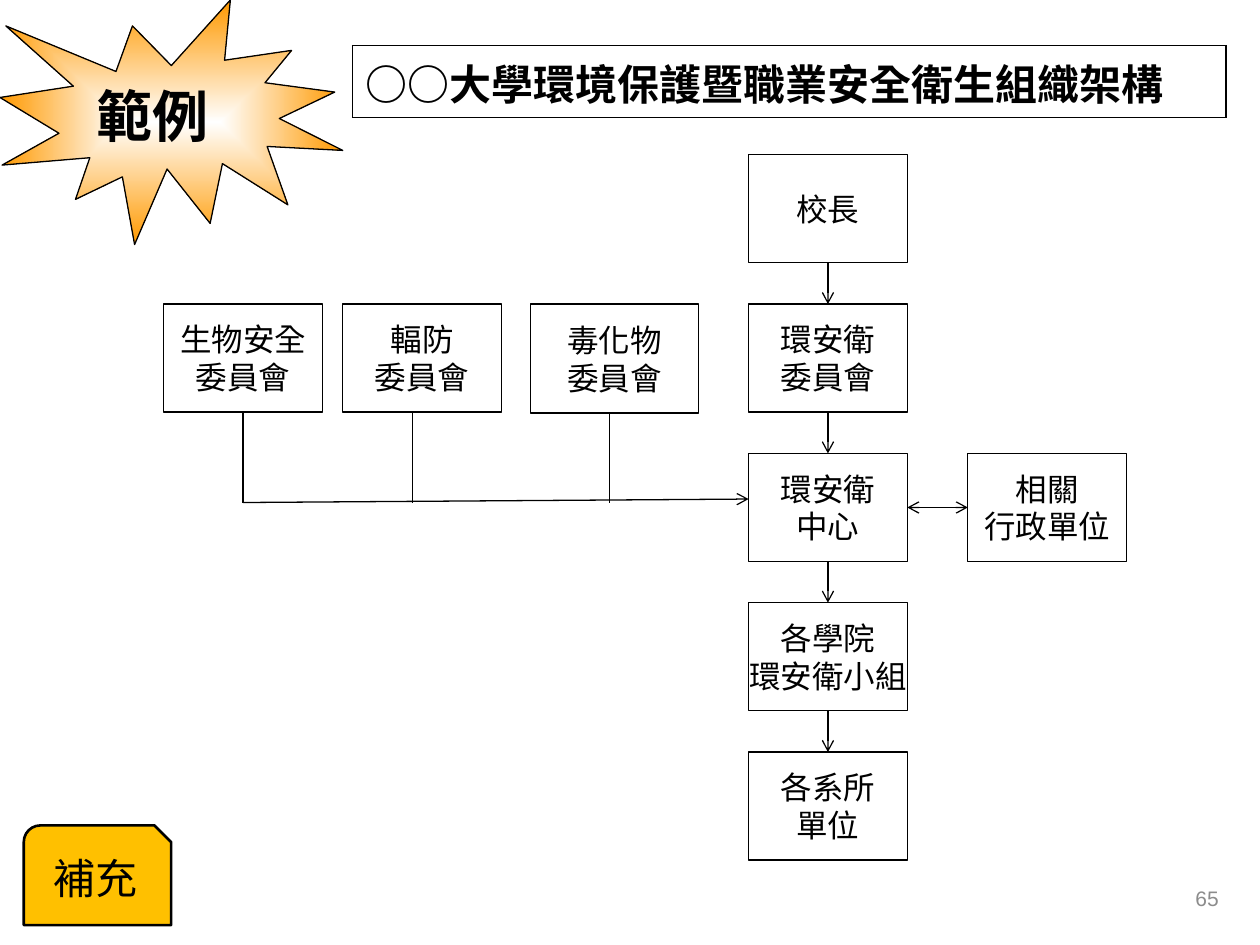
"""Build the campus safety organisation chart slide."""
from dataclasses import dataclass
from typing import Optional

from lxml import etree
from pptx import Presentation
from pptx.dml.color import RGBColor
from pptx.enum import shapes, text
from pptx.oxml.ns import qn
from pptx.util import Cm, Pt


@dataclass(frozen=True)
class Theme:
    """Colours, fonts and type sizes of the slide."""
    ink: RGBColor = RGBColor(0, 0, 0)
    paper: RGBColor = RGBColor(255, 255, 255)
    burst: RGBColor = RGBColor(0xFF, 0x99, 0x00)
    tag: RGBColor = RGBColor(0xFF, 0xC0, 0x00)
    muted: RGBColor = RGBColor(0x8C, 0x8C, 0x8C)
    sans: str = "Arial"
    serif: str = "Times New Roman"
    chinese: str = "Noto Sans CJK SC"
    number: int = 12
    body: int = 18
    title: int = 24
    example: int = 32
    thin: float = 0.75
    border: float = 1
    thick: float = 1.5


@dataclass(frozen=True)
class Unit:
    """A box of the chart, in centimetres."""
    label: str
    left: float
    top: float
    width: float = 3.2
    height: float = 2.18


THEME = Theme()
COLUMN_LEFT, FIRST_TOP, ROW_STEP = 15.09, 3.12, 3.01
COMMITTEE_TOP, CENTRE_TOP = FIRST_TOP + ROW_STEP, FIRST_TOP + 2 * ROW_STEP
BUS_TOP = 10.13

CHAIN = [Unit(label, COLUMN_LEFT, FIRST_TOP + row * ROW_STEP) for row, label in enumerate(
    ["校長", "環安衛\n委員會", "環安衛\n中心", "各學院\n環安衛小組", "各系所\n單位"])]
COMMITTEES = [
    Unit("生物安全\n委員會", 3.3, COMMITTEE_TOP),
    Unit("輻防\n委員會", 6.91, COMMITTEE_TOP),
    Unit("毒化物\n委員會", 10.69, COMMITTEE_TOP, 3.4, 2.2),
]
DROP_LEFTS = [4.9, 8.31, 12.29]
OFFICES = Unit("相關\n行政單位", 19.51, CENTRE_TOP)


def write(frame, label: str, size: int, font: str, color=THEME.ink, bold=False,
          align=text.PP_ALIGN.LEFT) -> None:
    """Fill a text frame and format its runs."""
    frame.text = label
    for paragraph in frame.paragraphs:
        paragraph.alignment = align
        for run in paragraph.runs:
            run.font.size, run.font.name, run.font.bold = Pt(size), font, bold
            run.font.color.rgb = color
            properties = run._r.get_or_add_rPr()
            properties.set("lang", "zh-TW")
            east_asian = etree.Element(qn("a:ea"), typeface=THEME.chinese)
            properties.find(qn("a:latin")).addnext(east_asian)


def add_shape(slide, kind, left: float, top: float, width: float, height: float,
              line_width: float = THEME.thin):
    """Add an unfilled outlined shape without a shadow."""
    shape = slide.shapes.add_shape(kind, Cm(left), Cm(top), Cm(width), Cm(height))
    shape.shadow.inherit = False
    shape.fill.background()
    shape.line.color.rgb = THEME.ink
    shape.line.width = Pt(line_width)
    return shape


def add_unit(slide, unit: Unit):
    """Add a labelled box of the chart."""
    shape = add_shape(slide, shapes.MSO_SHAPE.RECTANGLE, unit.left, unit.top,
                      unit.width, unit.height)
    frame = shape.text_frame
    write(frame, unit.label, THEME.body, THEME.sans, align=text.PP_ALIGN.CENTER)
    frame.word_wrap = False
    frame.vertical_anchor = text.MSO_ANCHOR.MIDDLE
    return shape


def add_line(slide, start=(0, 0), end=(0, 0), begin: Optional[tuple] = None,
             finish: Optional[tuple] = None, arrows: tuple = ()):
    """Add a straight line, joined to (shape, side) pairs where given."""
    line = slide.shapes.add_connector(shapes.MSO_CONNECTOR.STRAIGHT,
                                      *(Cm(value) for value in (*start, *end)))
    if begin:
        line.begin_connect(*begin)
    if finish:
        line.end_connect(*finish)
    line.line.color.rgb = THEME.ink
    line.line.width = Pt(THEME.thin)
    for arrow in arrows:
        etree.SubElement(line.line._get_or_add_ln(), qn(f"a:{arrow}"), type="arrow")
    etree.SubElement(line._element.spPr, qn("a:effectLst"))
    return line


def add_label(slide, left: float, top: float, width: float, height: float):
    """Add a wrapping text box and return its text frame."""
    frame = slide.shapes.add_textbox(Cm(left), Cm(top), Cm(width), Cm(height)).text_frame
    frame.word_wrap = True
    return frame


def add_title(slide) -> None:
    """Add the title as a bordered one-cell table."""
    table = slide.shapes.add_table(1, 1, Cm(7.11), Cm(0.92), Cm(17.6), Cm(1.45)).table
    table.first_row = table.horz_banding = False
    cell = table.cell(0, 0)
    write(cell.text_frame, "○○大學環境保護暨職業安全衛生組織架構", THEME.title,
          THEME.serif, bold=True)
    properties = cell._tc.get_or_add_tcPr()
    for side in ("lnL", "lnR", "lnT", "lnB"):
        border = etree.SubElement(properties, qn(f"a:{side}"), w=str(Pt(THEME.border)))
        fill = etree.SubElement(border, qn("a:solidFill"))
        etree.SubElement(fill, qn("a:srgbClr"), val=str(THEME.ink))
    cell.fill.background()


def add_example_burst(slide) -> None:
    """Add the example burst with its caption."""
    burst = add_shape(slide, shapes.MSO_SHAPE.EXPLOSION1, 0, 0, 6.91, 4.93)
    burst.fill.gradient()
    for stop, color in zip(burst.fill.gradient_stops, (THEME.paper, THEME.burst)):
        stop.color.rgb = color
    gradient = burst._element.spPr.find(qn("a:gradFill"))
    gradient.remove(gradient.find(qn("a:lin")))
    shade = etree.Element(qn("a:path"), attrib={"path": "shape"})
    gradient.find(qn("a:gsLst")).addnext(shade)
    etree.SubElement(shade, qn("a:fillToRect"), dict.fromkeys("ltrb", "50000"))
    write(add_label(slide, 1.7, 1.52, 3.2, 1.6), "範例", THEME.example, THEME.chinese, bold=True)


def add_chart_boxes(slide) -> None:
    """Add the organisation boxes and the lines between them."""
    chain = [add_unit(slide, unit) for unit in CHAIN]
    for upper, lower in zip(chain, chain[1:]):
        add_line(slide, begin=(upper, 2), finish=(lower, 0), arrows=("tailEnd",))
    for unit, left in zip(COMMITTEES, DROP_LEFTS):
        shape = add_unit(slide, unit)
        bottom = unit.top + unit.height
        centred = abs(unit.left + unit.width / 2 - left) < 0.01
        add_line(slide, (left, bottom), (left, BUS_TOP), begin=(shape, 2) if centred else None)
    add_line(slide, (DROP_LEFTS[0], BUS_TOP), (COLUMN_LEFT, 10.06), arrows=("tailEnd",))
    offices = add_unit(slide, OFFICES)
    add_line(slide, begin=(chain[2], 3), finish=(offices, 1), arrows=("headEnd", "tailEnd"))


def add_footer(slide) -> None:
    """Add the supplement tag and the slide number."""
    tag = add_shape(slide, shapes.MSO_SHAPE.SNIP_ROUND_RECTANGLE, 0.48, 16.64, 2.97, 2.01,
                    THEME.thick)
    tag.fill.solid()
    tag.fill.fore_color.rgb = THEME.tag
    write(tag.text_frame, "補充", THEME.title, THEME.serif, align=text.PP_ALIGN.CENTER)
    tag.text_frame.vertical_anchor = text.MSO_ANCHOR.MIDDLE
    number = add_label(slide, 18.9, 17.6, 5.92, 1.02)
    write(number, "65", THEME.number, THEME.sans, THEME.muted, align=text.PP_ALIGN.RIGHT)
    number.vertical_anchor = text.MSO_ANCHOR.MIDDLE


def main() -> None:
    """Build and save the presentation."""
    presentation = Presentation()
    presentation.slide_width, presentation.slide_height = Cm(25.4), Cm(19.05)
    slide = presentation.slides.add_slide(presentation.slide_layouts[6])
    add_example_burst(slide)
    add_title(slide)
    add_chart_boxes(slide)
    add_footer(slide)
    presentation.save("out.pptx")


if __name__ == "__main__":
    main()
